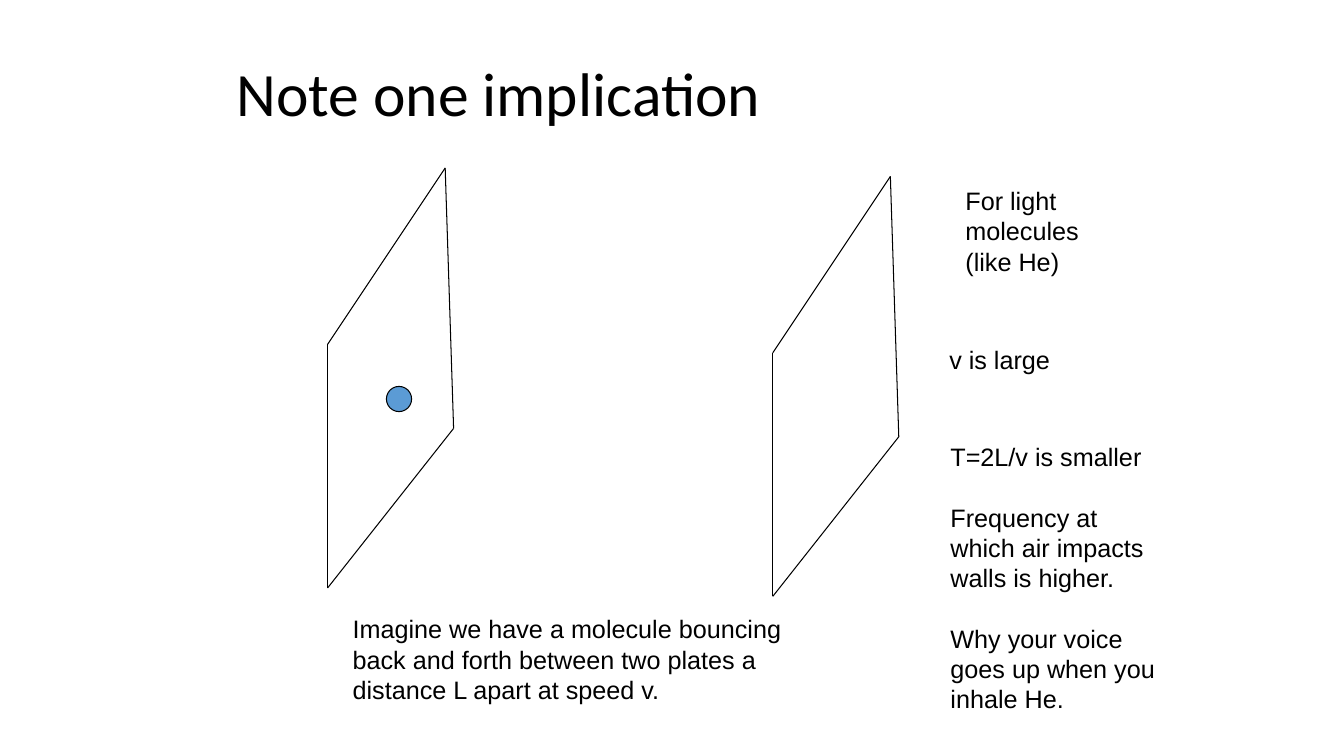
from pptx import Presentation
from pptx import util as u
from pptx.dml import color as c
from pptx.enum import shapes, text
from pptx.oxml.ns import qn
from lxml import etree

Pt = u.Pt


def color(hex_code):
    return c.RGBColor.from_string(hex_code)


class Board:
    """Holds the style and the current slide."""
    font = "Arial"
    size = 18
    ink = "000000"
    ball = "5B9BD5"
    weight = 0.75

    def __init__(self, slide):
        self.slide = slide

    def label(self, left, top, width, height, paras, font=None, size=None,
              gap=0, lead=None, wrap=True, anchor=text.MSO_ANCHOR.TOP):
        box = self.slide.shapes.add_textbox(
            Pt(left), Pt(top), Pt(width), Pt(height))
        frame = box.text_frame
        frame.word_wrap = wrap
        frame.vertical_anchor = anchor
        for i, words in enumerate(paras):
            para = frame.paragraphs[0] if i == 0 else frame.add_paragraph()
            if i:
                para.space_before = Pt(gap)
            if lead:
                para.line_spacing = lead
            run = para.add_run()
            run.text = words
            run.font.name = font or self.font
            run.font.size = Pt(size or self.size)
            run.font.color.rgb = color(self.ink)

    def stroke(self, line):
        line.color.rgb = color(self.ink)
        line.width = Pt(self.weight)

    def edge(self, start, end):
        link = self.slide.shapes.add_connector(
            shapes.MSO_CONNECTOR.STRAIGHT, *map(Pt, start + end))
        self.stroke(link.line)
        etree.SubElement(link._element.spPr, qn("a:effectLst"))

    def plate(self, left, top):
        # Corners in order around the plate
        corners = [(left + x, top + y)
                   for x, y in ((0, 300), (0, 126), (84, 0), (90, 186))]
        for start, end in zip(corners, corners[1:] + corners[:1]):
            self.edge(start, end)

    def dot(self, left, top, size):
        disc = self.slide.shapes.add_shape(
            shapes.MSO_SHAPE.OVAL, Pt(left), Pt(top), Pt(size), Pt(size))
        disc.shadow.inherit = False
        disc.fill.solid()
        disc.fill.fore_color.rgb = color(self.ball)
        self.stroke(disc.line)


def main():
    deck = Presentation()
    deck.slide_width, deck.slide_height = Pt(960), Pt(540)
    board = Board(deck.slides.add_slide(deck.slide_layouts[6]))

    # Title
    board.label(162, 24, 648, 90, ["Note one implication"], font="Calibri",
                size=44, lead=0.9, anchor=text.MSO_ANCHOR.MIDDLE)

    # Two plates and the molecule
    board.plate(234, 120)
    board.plate(552, 126)
    board.dot(276, 276, 18)

    # Caption below the plates
    board.label(244.8, 434.9, 367.2, 72, [
        "Imagine we have a molecule bouncing",
        "back and forth between two plates a distance L apart at speed v."])

    # Reasoning on the right
    board.label(682.5, 128.9, 121, 72, ["For light molecules (like He)"])
    board.label(671, 242.6, 86.4, 28.8, ["v is large"], wrap=False)
    board.label(671.8, 311.8, 167.8, 201.6, [
        "T=2L/v is smaller",
        "Frequency at which air impacts walls is higher.",
        "Why your voice goes up when you inhale He."], gap=21.6)

    deck.save("out.pptx")


if __name__ == "__main__":
    main()
